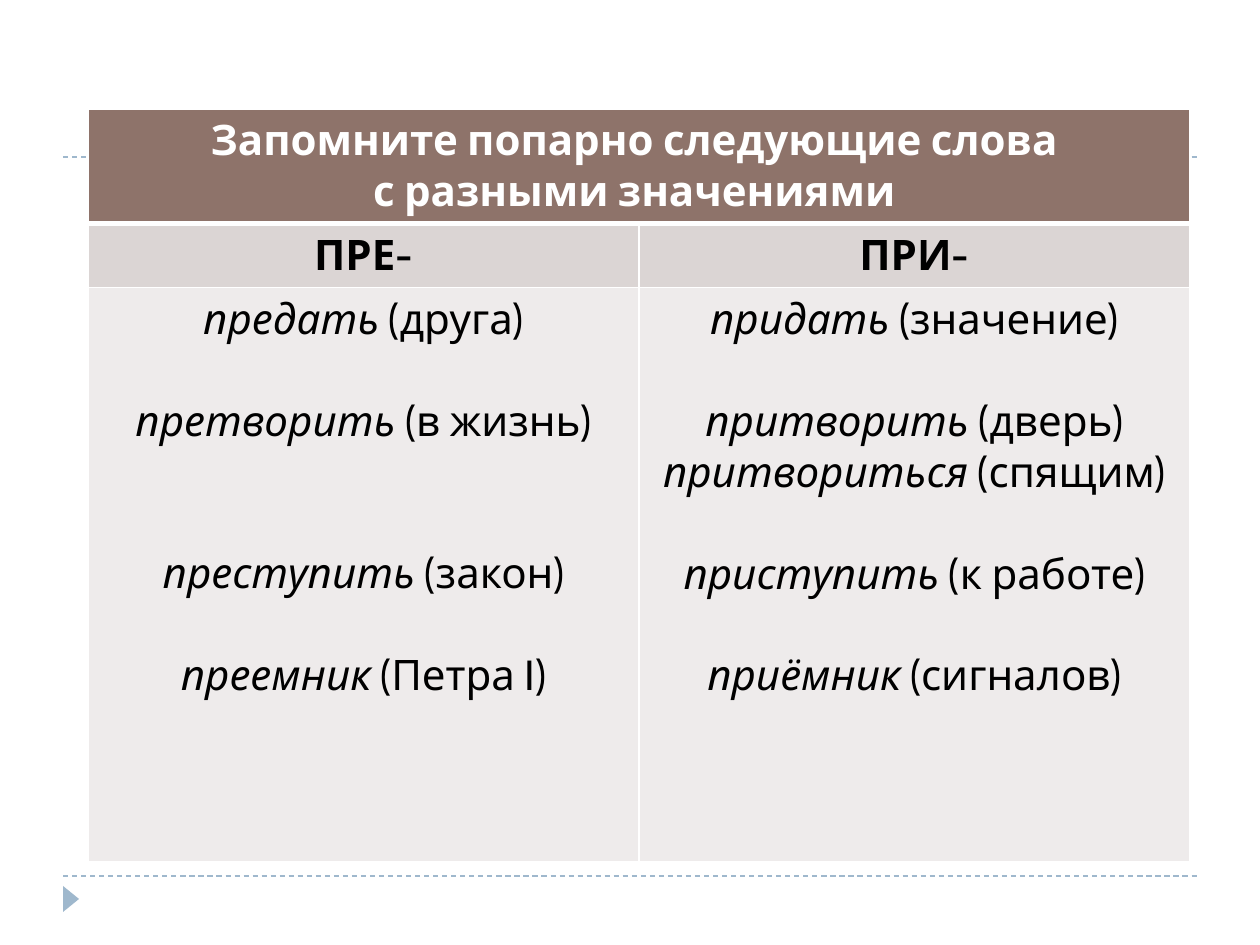
from lxml import etree
from pptx import Presentation
from pptx.dml.color import RGBColor
from pptx.enum.dml import MSO_LINE
from pptx.enum.shapes import MSO_CONNECTOR, MSO_SHAPE
from pptx.enum.text import PP_ALIGN
from pptx.oxml import parse_xml
from pptx.oxml.ns import nsdecls, qn
from pptx.util import Pt

STRAIGHT = MSO_CONNECTOR.STRAIGHT
TRIANGLE = MSO_SHAPE.ISOSCELES_TRIANGLE
DASH = MSO_LINE.DASH
CENTER = PP_ALIGN.CENTER

FONT = "Cabin"
SIZE = 24
LINE = 29  # height of one text line, in points
ACCENT, WHITE, BLACK = "9FB8CD", "FFFFFF", "000000"
TITLE_FILL, HEAD_FILL, BODY_FILL = "8E736A", "DBD5D4", "EEEBEB"

TITLE = ["Запомните попарно следующие слова ", "с разными значениями "]
HEADS = ["ПРЕ-", "ПРИ-"]
# word, explanation, empty lines above
WORDS = [
    [("предать", " (друга)", 0),
     ("претворить", " (в жизнь)", 1),
     ("преступить", " (закон)", 2),
     ("преемник", " (Петра I)", 1)],
    [("придать", " (значение)", 0),
     ("притворить", " (дверь)", 1),
     ("притвориться", " (спящим)", 0),
     ("приступить", " (к работе)", 1),
     ("приёмник ", "(сигналов)", 1)],
]


def px(n):
    return round(n * 914400 / 126)


def rgb(color):
    return RGBColor.from_string(color)


def add_rule(s, y):
    c = s.shapes.add_connector(STRAIGHT, px(63), px(y), px(1197), px(y))
    c.line.color.rgb = rgb(ACCENT)
    c.line.width = Pt(0.75)
    c.line.dash_style = DASH
    etree.SubElement(c._element.spPr, qn("a:effectLst"))


def add_marker(s):
    sp = s.shapes.add_shape(TRIANGLE, px(58), px(891), px(26), px(16))
    sp.rotation = 90
    sp.shadow.inherit = False
    sp.fill.solid()
    sp.fill.fore_color.rgb = rgb(ACCENT)
    sp.line.fill.background()


def style_cell(cell, fill, bottom=1):
    cell.fill.solid()
    cell.fill.fore_color.rgb = rgb(fill)
    tcPr = cell._tc.get_or_add_tcPr()
    for i, (side, width) in enumerate(zip("LRTB", (1, 1, 1, bottom))):
        tcPr.insert(i, parse_xml(
            f'<a:ln{side} {nsdecls("a")} w="{Pt(width)}"><a:solidFill>'
            f'<a:srgbClr val="{WHITE}"/></a:solidFill></a:ln{side}>'))


def add_line(tf, index, runs, color=BLACK, bold=False, before=0):
    """Add a centred paragraph; runs are (text, italic) pairs."""
    p = tf.paragraphs[0] if index == 0 else tf.add_paragraph()
    p.alignment = CENTER
    if before:
        p.space_before = Pt(before)
    p.font.name = FONT
    p.font.size = Pt(SIZE)
    p.font.bold = bold
    p.font.color.rgb = rgb(color)
    for text, italic in runs:
        r = p.add_run()
        r.text = text
        r.font.italic = italic


def add_word_table(s):
    heights = [113, 64, 574]
    table = s.shapes.add_table(3, 2, px(88), px(109), px(1102),
                               px(sum(heights))).table
    for row, height in zip(table.rows, heights):
        row.height = px(height)

    # Title across both columns
    title = table.cell(0, 0)
    title.merge(table.cell(0, 1))
    for col in range(2):
        style_cell(table.cell(0, col), TITLE_FILL, bottom=3)
    for i, text in enumerate(TITLE):
        add_line(title.text_frame, i, [(text, False)], WHITE, bold=True)

    # Prefixes and their words
    for col, (head, words) in enumerate(zip(HEADS, WORDS)):
        cell = table.cell(1, col)
        style_cell(cell, HEAD_FILL)
        add_line(cell.text_frame, 0, [(head, False)], bold=True)
        cell = table.cell(2, col)
        style_cell(cell, BODY_FILL)
        for i, (word, meaning, gap) in enumerate(words):
            add_line(cell.text_frame, i, [(word, True), (meaning, False)],
                     before=gap * LINE)


def main():
    prs = Presentation()
    prs.slide_width, prs.slide_height = px(1260), px(945)
    s = prs.slides.add_slide(prs.slide_layouts[6])
    for y in (876, 157):
        add_rule(s, y)
    add_marker(s)
    add_word_table(s)
    prs.save("out.pptx")


if __name__ == "__main__":
    main()
